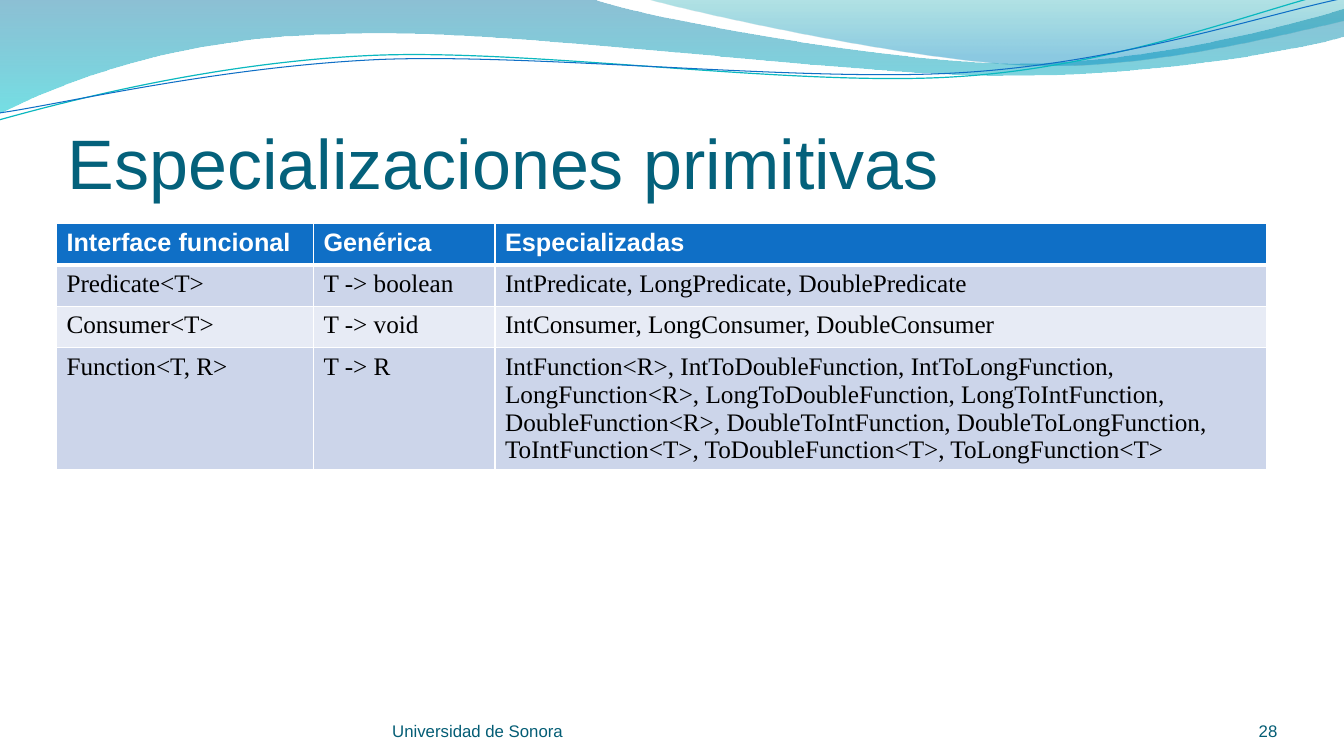
from math import cos, radians, sin

from lxml import etree
from pptx import Presentation
from pptx.dml.color import RGBColor
from pptx.enum.text import MSO_ANCHOR, MSO_AUTO_SIZE, PP_ALIGN
from pptx.oxml.ns import qn
from pptx.util import Inches, Pt

WHITE = RGBColor(0xFF, 0xFF, 0xFF)
BLACK = RGBColor(0, 0, 0)
TITLE_COLOR = RGBColor(0x04, 0x61, 0x7B)
FOOTER_COLOR = RGBColor(0x04, 0x5D, 0x75)
BLUE = RGBColor(0x0F, 0x6F, 0xC6)
TEAL = RGBColor(0x0A, 0xB8, 0xBF)
DEEP_BLUE = RGBColor(0x00, 0x74, 0xA1)
CYAN = RGBColor(0x00, 0xC6, 0xCF)
SEA_GREEN = RGBColor(0x00, 0xA1, 0xA9)
SKY_BLUE = RGBColor(0x00, 0x8B, 0xBF)
ROW_FILLS = [RGBColor(0xCC, 0xD5, 0xEA), RGBColor(0xE7, 0xEB, 0xF5)]

TITLE = "Especializaciones primitivas"
TABLE_ROWS = [
    ("Interface funcional", "Genérica", "Especializadas"),
    ("Predicate<T>", "T -> boolean", "IntPredicate, LongPredicate, DoublePredicate"),
    ("Consumer<T>", "T -> void", "IntConsumer, LongConsumer, DoubleConsumer"),
    ("Function<T, R>", "T -> R",
     "IntFunction<R>, IntToDoubleFunction, IntToLongFunction, "
     "LongFunction<R>, LongToDoubleFunction, LongToIntFunction, "
     "DoubleFunction<R>, DoubleToIntFunction, DoubleToLongFunction, "
     "ToIntFunction<T>, ToDoubleFunction<T>, ToLongFunction<T>"),
]
COLUMN_WIDTHS = [2.55, 1.8, 7.65]
ROW_HEIGHT = 0.41
TABLE_HEIGHT = 2.52
FOOTERS = [
    ("Universidad de Sonora", 3.89, 4.89, PP_ALIGN.LEFT),
    ("28", 11.56, 1.11, PP_ALIGN.RIGHT),
]

# Each segment holds one end point, or two control points and an end point.
BANDS = [
    ([[(0, 0)], [(5.87, -0.01)],
      [(6.34, 0.17), (8.85, 0.63), (10.11, 0.63)],
      [(11.38, 0.63), (12.78, 0.26), (13.33, 0.09)],
      [(13.35, 0.36)],
      [(13.11, 0.44), (11.6, 0.76), (9.94, 0.75)],
      [(8.29, 0.75), (5.09, 0.28), (3.43, 0.34)],
      [(1.72, 0.36), (0.61, 0.83), (-0.01, 1.13)],
      [(0, 0)]],
     [(0, DEEP_BLUE, 45), (1, CYAN, 55)]),
    ([[(6.39, -0.01)],
      [(6.79, 0.11), (9.09, 0.62), (10.25, 0.65)],
      [(11.41, 0.69), (12.82, 0.32), (13.33, 0.21)],
      [(13.33, 0)], [(6.39, -0.01)]],
     [(0, SEA_GREEN, 30), (0.8, SKY_BLUE, 45)]),
]
WAVES = [
    ([[(-0.01, 1.19)],
      [(0.64, 1.01), (2.11, 0.62), (3.69, 0.55)],
      [(5.27, 0.48), (7.9, 0.87), (9.5, 0.76)],
      [(11.1, 0.66), (12.52, 0.08), (13.31, -0.1)]], (6.65, 0.58), TEAL, 0.85),
    ([[(0, 1.12)],
      [(0.63, 1.03), (2.18, 0.66), (3.78, 0.59)],
      [(5.37, 0.53), (7.96, 0.82), (9.55, 0.72)],
      [(11.15, 0.62), (12.55, 0.14), (13.34, -0.02)]], (6.67, 0.59), BLUE, 0.75),
]
WAVE_TILT = 2.7


def add_outline(slide, outline, close):
    """Add a freeform that follows straight and curved segments."""
    vertices = [(Inches(x), Inches(y)) for segment in outline for x, y in segment]
    builder = slide.shapes.build_freeform(*vertices[0])
    builder.add_line_segments(vertices[1:], close=close)
    shape = builder.convert_to_shape()
    shape.shadow.inherit = False
    steps = iter(list(shape.element.iter(qn("a:lnTo"))))
    for segment in outline[1:]:
        segment_steps = [next(steps) for _ in segment]
        if len(segment) == 3:
            curve = etree.Element(qn("a:cubicBezTo"))
            segment_steps[0].addprevious(curve)
            for step in segment_steps:
                curve.append(step[0])
                step.getparent().remove(step)
    return shape


def add_band(slide, outline, stops):
    """Add a translucent band with a vertical gradient."""
    shape = add_outline(slide, outline, True)
    shape.line.fill.background()
    shape.fill.gradient()
    shape.fill.gradient_angle = 270
    for gradient_stop, (position, color, _) in zip(shape.fill.gradient_stops, stops):
        gradient_stop.position = position
        gradient_stop.color.rgb = color
    gradient = shape.element.spPr.find(qn("a:gradFill"))
    for color_element, (_, _, opacity) in zip(gradient.iter(qn("a:srgbClr")), stops):
        etree.SubElement(color_element, qn("a:alpha"), val=str(opacity * 1000))


def turn(point, center, degrees):
    """Return a point turned clockwise about a center."""
    across, down = point[0] - center[0], point[1] - center[1]
    cosine, sine = cos(radians(degrees)), sin(radians(degrees))
    return (center[0] + across * cosine - down * sine,
            center[1] + across * sine + down * cosine)


def add_wave(slide, outline, center, color, width):
    """Add a thin, tilted open wave line."""
    level = [[turn(point, center, WAVE_TILT) for point in segment] for segment in outline]
    shape = add_outline(slide, level, False)
    shape.rotation = 360 - WAVE_TILT
    shape.fill.background()
    shape.line.color.rgb = color
    shape.line.width = Pt(width)


def style_text(paragraph, size, font_name, color, bold=False):
    """Set the font of a whole paragraph."""
    font = paragraph.font
    font.size, font.name, font.bold = Pt(size), font_name, bold
    font.color.rgb = color


def add_border(cell, side, width):
    """Add a white border to one side of a cell."""
    properties = cell._tc.get_or_add_tcPr()
    line = etree.SubElement(properties, qn(f"a:ln{side}"), w=str(Pt(width)))
    fill = etree.SubElement(line, qn("a:solidFill"))
    etree.SubElement(fill, qn("a:srgbClr"), val=str(WHITE))


def add_interface_table(slide):
    """Add the table of functional interfaces."""
    frame = slide.shapes.add_table(
        len(TABLE_ROWS), len(COLUMN_WIDTHS), Inches(0.56), Inches(2.22),
        Inches(sum(COLUMN_WIDTHS)), Inches(TABLE_HEIGHT))
    table = frame.table
    for column, width in zip(table.columns, COLUMN_WIDTHS):
        column.width = Inches(width)
    for row_index, texts in enumerate(TABLE_ROWS):
        table.rows[row_index].height = Inches(ROW_HEIGHT)
        header = row_index == 0
        border_widths = {"L": 1, "R": 1, "T": 3 if row_index == 1 else 1, "B": 3 if header else 1}
        for column_index, text in enumerate(texts):
            cell = table.cell(row_index, column_index)
            cell.text = text
            for side, width in border_widths.items():
                add_border(cell, side, width)
            cell.fill.solid()
            cell.fill.fore_color.rgb = BLUE if header else ROW_FILLS[(row_index - 1) % 2]
            style_text(cell.text_frame.paragraphs[0], 18,
                       "Arial" if header else "Times New Roman",
                       WHITE if header else BLACK, header)
    frame.height = Inches(TABLE_HEIGHT)


def fill_frame(shape, text, alignment, top_margin):
    """Write bottom-anchored text and return its paragraph."""
    frame = shape.text_frame
    frame.text = text
    frame.word_wrap = True
    frame.auto_size = MSO_AUTO_SIZE.NONE
    frame.vertical_anchor = MSO_ANCHOR.BOTTOM
    frame.margin_left = frame.margin_right = frame.margin_bottom = 0
    frame.margin_top = Inches(top_margin)
    paragraph = frame.paragraphs[0]
    paragraph.alignment = alignment
    return paragraph


def main():
    """Build the slide and save it."""
    presentation = Presentation()
    presentation.slide_width, presentation.slide_height = Inches(13.33), Inches(7.5)
    slide = presentation.slides.add_slide(presentation.slide_layouts[5])
    for band in BANDS:
        add_band(slide, *band)
    for wave in WAVES:
        add_wave(slide, *wave)
    title = slide.shapes.title
    title.left, title.top = Inches(0.67), Inches(0.77)
    title.width, title.height = Inches(12), Inches(1.25)
    style_text(fill_frame(title, TITLE, PP_ALIGN.LEFT, 0.05), 50, "Arial", TITLE_COLOR)
    add_interface_table(slide)
    for text, left, width, alignment in FOOTERS:
        box = slide.shapes.add_textbox(Inches(left), Inches(6.95), Inches(width), Inches(0.4))
        style_text(fill_frame(box, text, alignment, 0), 12, "Arial", FOOTER_COLOR)
    presentation.save("out.pptx")


if __name__ == "__main__":
    main()
